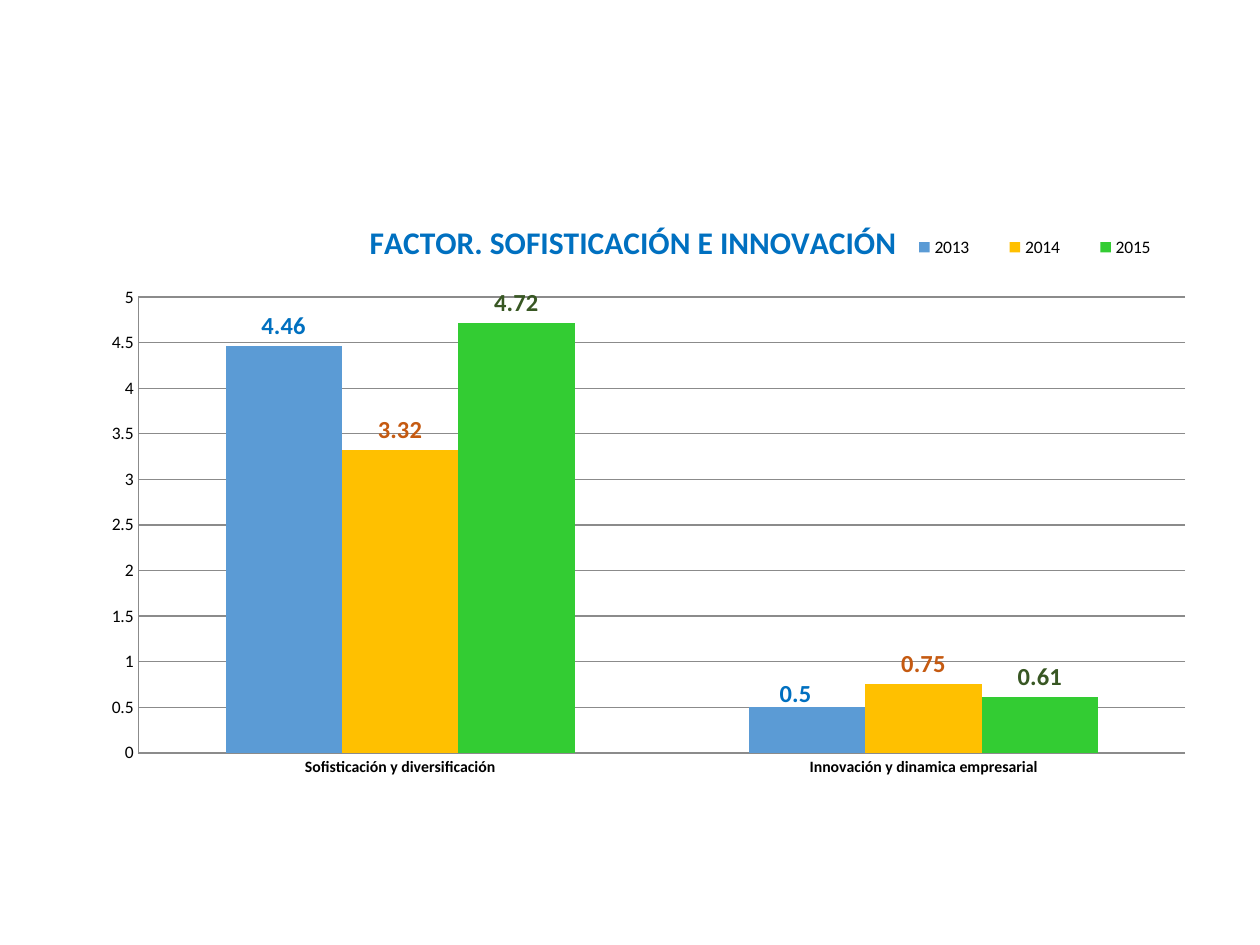
from pptx import Presentation
from pptx.chart.data import CategoryChartData
from pptx.dml.color import RGBColor
from pptx.enum.chart import XL_CHART_TYPE as ChartType
from pptx.enum.chart import XL_LABEL_POSITION as LabelPosition
from pptx.enum.chart import XL_LEGEND_POSITION as LegendPosition
from pptx.enum.chart import XL_TICK_MARK as TickMark
from pptx.oxml import parse_xml
from pptx.oxml.ns import nsdecls, qn
from pptx.util import Pt

FONT = "Calibri"
COLORS = {
    "text": "000000",
    "title": "0070C0",
    "line": "8B8B8B",
    "2013": "5B9BD5",
    "2014": "FFC000",
    "2015": "33CC33",
    "2013 label": "0070C0",
    "2014 label": "C55A11",
    "2015 label": "385723",
}
CATEGORIES = ["Sofisticación y diversificación", "Innovación y dinamica empresarial"]
SERIES = {"2013": (4.46, 0.5), "2014": (3.32, 0.75), "2015": (4.72, 0.61)}


def color(name):
    """Return the named colour."""
    return RGBColor.from_string(COLORS[name])


def style_font(font, size, color_name, bold=False):
    """Set the family, size, colour and weight of a font."""
    font.name = FONT
    font.size = Pt(size)
    font.bold = bold
    font.color.rgb = color(color_name)


def style_line(line):
    """Give an axis or gridline its thin grey stroke."""
    line.color.rgb = color("line")
    line.width = Pt(0.75)


def set_layout(element, index=1, **settings):
    """Place a chart part by hand, in fractions of the chart."""
    values = "".join(f'<c:{tag} val="{value}"/>' for tag, value in settings.items())
    layout = parse_xml(
        f'<c:layout {nsdecls("c")}><c:manualLayout>{values}</c:manualLayout></c:layout>'
    )
    present = element.find(qn("c:layout"))
    if present is not None:
        element.remove(present)
    element.insert(index, layout)


def add_column_chart(slide):
    """Add the clustered column chart with its data."""
    data = CategoryChartData()
    data.categories = CATEGORIES
    for name, values in SERIES.items():
        data.add_series(name, values)
    frame = slide.shapes.add_chart(
        ChartType.COLUMN_CLUSTERED, Pt(29.5), Pt(108), Pt(661), Pt(370), data
    )
    chart = frame.chart
    style_font(chart.font, 10, "text")
    return chart


def format_title(chart):
    """Write and place the chart title."""
    chart.has_title = True
    title = chart.chart_title
    title.include_in_layout = False
    paragraph = title.text_frame.paragraphs[0]
    paragraph.text = "FACTOR. SOFISTICACIÓN E INNOVACIÓN"
    style_font(paragraph.font, 18, "title", True)
    set_layout(title._element, xMode="edge", yMode="edge", x=0.27, y=0.04)


def format_legend(chart):
    """Place the legend in a row beside the title."""
    chart.has_legend = True
    legend = chart.legend
    legend.position = LegendPosition.RIGHT
    legend.include_in_layout = False
    style_font(legend.font, 10, "text")
    set_layout(
        legend._element, xMode="edge", yMode="edge", x=0.72, y=0.06, w=0.26, h=0.06
    )


def format_axes(chart):
    """Style both axes and the horizontal gridlines."""
    for axis, size, bold in ((chart.category_axis, 9, True), (chart.value_axis, 10, False)):
        axis.major_tick_mark = axis.minor_tick_mark = TickMark.NONE
        style_line(axis.format.line)
        style_font(axis.tick_labels.font, size, "text", bold)
    chart.category_axis.has_major_gridlines = False
    value_axis = chart.value_axis
    value_axis.minimum_scale, value_axis.maximum_scale = 0, 5
    value_axis.major_unit = 0.5
    value_axis.has_major_gridlines = True
    style_line(value_axis.major_gridlines.format.line)


def format_series(plot):
    """Colour the columns and show their values above them."""
    plot.gap_width = 150
    plot.overlap = 0
    plot.vary_by_categories = False
    for series in plot.series:
        series.format.fill.solid()
        series.format.fill.fore_color.rgb = color(series.name)
        labels = series.data_labels
        labels.show_value = True
        labels.position = LabelPosition.OUTSIDE_END
        style_font(labels.font, 14, f"{series.name} label", True)


def shift_label(series, point_index, x, y):
    """Move one value label away from its default place."""
    label = series.points[point_index].data_label
    label.position = LabelPosition.OUTSIDE_END
    style_font(label.font, 14, f"{series.name} label", True)
    set_layout(series._element.find(f'.//{qn("c:dLbl")}'), x=x, y=y)


def main():
    """Build the slide and save it."""
    presentation = Presentation()
    presentation.slide_width, presentation.slide_height = Pt(720), Pt(540)
    slide = presentation.slides.add_slide(presentation.slide_layouts[6])
    chart = add_column_chart(slide)
    format_title(chart)
    format_legend(chart)
    format_axes(chart)
    plot = chart.plots[0]
    format_series(plot)
    shift_label(plot.series[0], 1, -0.01, 0.01)
    plot_area = chart._chartSpace.find(f'.//{qn("c:plotArea")}')
    set_layout(
        plot_area, 0, layoutTarget="inner", xMode="edge", yMode="edge",
        x=0.075, y=0.167, w=0.905, h=0.704,
    )
    presentation.save("out.pptx")


if __name__ == "__main__":
    main()
